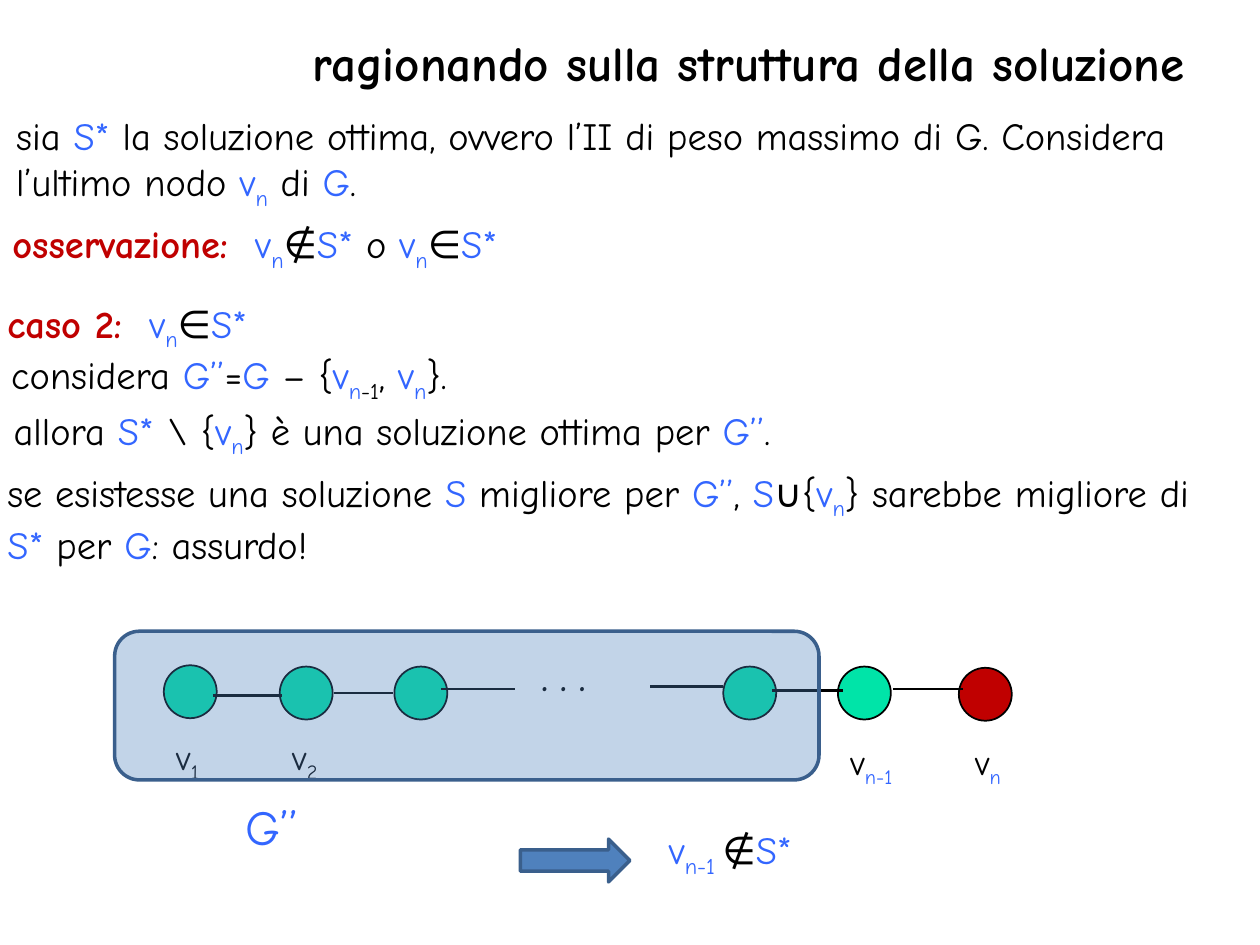
from lxml import etree
from pptx import Presentation
from pptx.dml.color import RGBColor
from pptx.enum.shapes import MSO_CONNECTOR, MSO_SHAPE
from pptx.enum.text import MSO_ANCHOR, MSO_AUTO_SIZE, PP_ALIGN
from pptx.oxml.ns import qn
from pptx.util import Inches, Pt

STRAIGHT = MSO_CONNECTOR.STRAIGHT
OVAL, ARROW, ROUNDED = MSO_SHAPE.OVAL, MSO_SHAPE.RIGHT_ARROW, MSO_SHAPE.ROUNDED_RECTANGLE
TOP, RIGHT = MSO_ANCHOR.TOP, PP_ALIGN.RIGHT
FIXED, GROW = MSO_AUTO_SIZE.NONE, MSO_AUTO_SIZE.SHAPE_TO_FIT_TEXT

FONT = "Comic Neue"
COLORS = {
    "black": "000000",
    "blue": "3366FF",
    "red": "C00000",
    "green": "00E4A8",
    "steel": "4F81BD",
    "navy": "3A5F8C",
}
# Each mark switches one format on and off inside a text
MARKS = {"~": "blue", "_": "subscript", "#": "heading"}


def rgb(name):
    return RGBColor.from_string(COLORS[name])


def write(paragraph, text, size=22, bold=False):
    """Write marked text: ~blue~, _subscript_, #bold red heading#."""
    active, piece = set(), ""

    def flush():
        if not piece:
            return
        run = paragraph.add_run()
        run.text = piece
        font = run.font
        font.name, font.size = FONT, Pt(size)
        font.bold = bold or "heading" in active
        color = "red" if "heading" in active else "blue" if "blue" in active else "black"
        font.color.rgb = rgb(color)
        if "subscript" in active:
            run._r.get_or_add_rPr().set("baseline", "-25000")

    for char in text:
        if char in MARKS:
            flush()
            piece = ""
            active ^= {MARKS[char]}
        else:
            piece += char
    flush()


class SlideBuilder:
    def __init__(self, slide):
        self.slide = slide
        self.shapes = slide.shapes

    def title(self, text, left, top, width, height):
        title = self.shapes.title
        title.left, title.top = Inches(left), Inches(top)
        title.width, title.height = Inches(width), Inches(height)
        frame = title.text_frame
        frame.auto_size, frame.vertical_anchor, frame.word_wrap = FIXED, TOP, True
        paragraph = frame.paragraphs[0]
        paragraph.alignment, paragraph.space_before = RIGHT, Pt(5.6)
        write(paragraph, text, size=28, bold=True)

    def text(self, text, left, top, width, height, grow=False, **style):
        box = self.shapes.add_textbox(Inches(left), Inches(top), Inches(width), Inches(height))
        frame = box.text_frame
        frame.word_wrap = True
        frame.auto_size = GROW if grow else FIXED
        write(frame.paragraphs[0], text, **style)

    def shape(self, kind, left, top, width, height, fill, line="black", weight=1, opacity=None):
        shape = self.shapes.add_shape(
            kind, Inches(left), Inches(top), Inches(width), Inches(height))
        shape.shadow.inherit = False
        shape.fill.solid()
        shape.fill.fore_color.rgb = rgb(fill)
        if opacity is not None:
            color = shape._element.spPr.find(f"{qn('a:solidFill')}/{qn('a:srgbClr')}")
            etree.SubElement(color, qn("a:alpha")).set("val", str(opacity * 1000))
        shape.line.color.rgb = rgb(line)
        shape.line.width = Pt(weight)

    def edge(self, start, end, y):
        edge = self.shapes.add_connector(
            STRAIGHT, Inches(start), Inches(y), Inches(end), Inches(y))
        edge.line.color.rgb = rgb("black")
        edge.line.width = Pt(1.5)
        etree.SubElement(edge._element.spPr, qn("a:effectLst"))


def main():
    prs = Presentation()
    prs.slide_width, prs.slide_height = Inches(10), Inches(7.5)
    page = SlideBuilder(prs.slides.add_slide(prs.slide_layouts[5]))

    # Title and argument
    page.title("ragionando sulla struttura della soluzione", 0.5, 0.21, 9, 1)
    page.text("sia ~S*~ la soluzione ottima, ovvero l’II di peso massimo di G. "
              "Considera l’ultimo nodo ~v_n_~ di ~G~.", 0.03, 0.84, 9.81, 0.84, grow=True)
    argument = [
        ("#osservazione:  #~v_n_~∉~S* ~o ~v_n_~∈~S*~", 0, 1.7, 0.63),
        ("#caso 2:  #~v_n_~∈~S*~", -0.04, 2.33, 0.47),
        ("considera ~G’’~=~G~ – {~v_n_~_-1_, ~v_n_~}.", -0.01, 2.74, 0.47),
        ("allora ~S* ~\\ {~v_n_~} è una soluzione ottima per ~G’’~.", 0.01, 3.18, 0.63),
        ("se esistesse una soluzione ~S~ migliore per ~G’’~, ~S~∪{~v_n_~} "
         "sarebbe migliore di ~S*~ per ~G~: assurdo!", -0.04, 3.67, 1.18),
    ]
    for sentence, left, top, height in argument:
        page.text(sentence, left, top, 9.61, height)

    # Path graph: nodes, then edges
    nodes = [(1.3, 5.28, "green"), (2.22, 5.29, "green"), (3.13, 5.29, "green"),
             (5.74, 5.29, "green"), (6.65, 5.29, "green"), (7.61, 5.3, "red")]
    for left, top, fill in nodes:
        page.shape(OVAL, left, top, 0.42, 0.42, fill)
    edges = [(1.69, 2.24, 5.52), (2.65, 3.12, 5.5), (3.5, 4.09, 5.47),
             (5.16, 5.74, 5.45), (6.13, 6.69, 5.48), (7.09, 7.64, 5.47)]
    for start, end, y in edges:
        page.edge(start, end, y)

    # Node labels
    labels = [("v_1_", 1.3, 5.79, 0.5), ("v_2_", 2.22, 5.79, 0.5),
              ("v~_n-1_~", 6.65, 5.83, 0.71), ("v~_n_~", 7.64, 5.83, 0.5)]
    for label, left, top, width in labels:
        page.text(label, left, top, width, 0.44, grow=True, size=20)
    page.text(". . .", 4.2, 5.16, 0.87, 0.44, grow=True, size=20, bold=True)

    # Subgraph G’’ laid over its nodes
    page.shape(ROUNDED, 0.91, 5.01, 5.59, 1.18, "steel", line="navy", weight=2, opacity=34)
    page.text("~G’’~", 1.85, 6.27, 0.63, 0.71, size=28)

    # Consequence
    page.shape(ARROW, 4.13, 6.66, 0.87, 0.34, "steel", line="navy", weight=2)
    page.text("~v_n-1 _~∉~S*~", 5.21, 6.51, 2.01, 0.71)

    prs.save("out.pptx")


if __name__ == "__main__":
    main()
